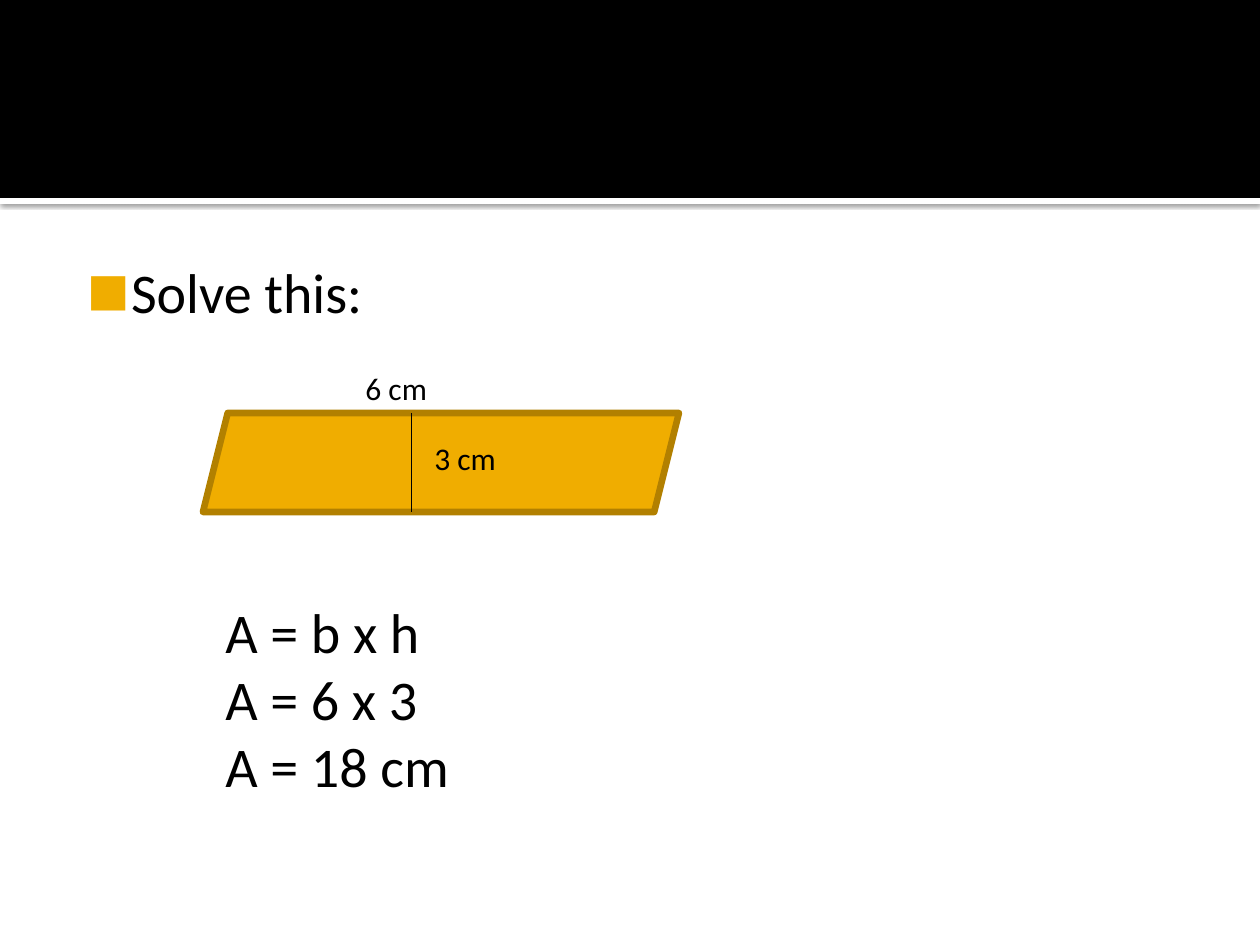
from dataclasses import dataclass

from lxml.etree import SubElement
from pptx import Presentation
from pptx.dml.color import RGBColor
from pptx.enum.shapes import MSO_CONNECTOR, MSO_SHAPE
from pptx.enum.text import MSO_ANCHOR, PP_ALIGN
from pptx.oxml.ns import qn
from pptx.util import Emu, Pt

PX = 914400 / 126
FONT = "Calibri"
COLORS = {
    "black": "000000",
    "white": "FFFFFF",
    "gold": "F0AD00",
    "dark_gold": "B28000",
}


@dataclass
class Box:
    left: int
    top: int
    width: int
    height: int

    def emu(self) -> list[Emu]:
        return [px(n) for n in (self.left, self.top, self.width, self.height)]


@dataclass
class Label:
    box: Box
    lines: list[str]
    size: int


def px(length: int) -> Emu:
    return Emu(round(length * PX))


def color(name: str) -> RGBColor:
    return RGBColor.from_string(COLORS[name])


def write(frame, lines: list[str], *, size: int, ink: str = "black") -> None:
    frame.word_wrap = True
    for index, line in enumerate(lines):
        para = frame.paragraphs[0] if index == 0 else frame.add_paragraph()
        para.alignment = PP_ALIGN.LEFT
        span = para.add_run()
        span.text = line
        span.font.name = FONT
        span.font.size = Pt(size)
        span.font.color.rgb = color(ink)


def add_block(page, kind: MSO_SHAPE, box: Box, fill: str):
    shape = page.shapes.add_shape(kind, *box.emu())
    shape.shadow.inherit = False
    shape.fill.solid()
    shape.fill.fore_color.rgb = color(fill)
    shape.line.fill.background()
    return shape


def add_shadow(shape) -> None:
    effects = shape._element.spPr.find(qn("a:effectLst"))
    shadow = SubElement(effects, qn("a:outerShdw"), blurRad=str(Pt(2.5)),
                        dist=str(Pt(0.8)), dir="5400000", algn="t", rotWithShape="0")
    tint = SubElement(shadow, qn("a:srgbClr"), val=COLORS["black"])
    SubElement(tint, qn("a:alpha"), val="60000")


def add_bullet(para, char: str, tint: str, percent: int, indent: int) -> None:
    props = para._p.get_or_add_pPr()
    props.set("marL", str(px(indent)))
    props.set("indent", str(px(-44)))
    bullet_color = SubElement(props, qn("a:buClr"))
    SubElement(bullet_color, qn("a:srgbClr"), val=COLORS[tint])
    SubElement(props, qn("a:buSzPct"), val=str(percent * 1000))
    SubElement(props, qn("a:buFont"), typeface=FONT)
    SubElement(props, qn("a:buChar"), char=char)


def add_label(page, label: Label) -> None:
    shape = page.shapes.add_textbox(*label.box.emu())
    write(shape.text_frame, label.lines, size=label.size)


def main() -> None:
    deck = Presentation()
    deck.slide_width, deck.slide_height = px(1260), px(945)
    page = deck.slides.add_slide(deck.slide_layouts[1])
    page.background.fill.solid()
    page.background.fill.fore_color.rgb = color("white")

    # Header band without a title
    title = page.shapes.title
    title._element.getparent().remove(title._element)
    add_shadow(add_block(page, MSO_SHAPE.RECTANGLE, Box(0, 198, 1260, 6), "white"))
    add_block(page, MSO_SHAPE.RECTANGLE, Box(0, 0, 1260, 198), "black")

    # Task
    body = page.placeholders[1]
    body.left, body.top, body.width, body.height = Box(63, 244, 1134, 638).emu()
    frame = body.text_frame
    frame.margin_left, frame.margin_top = px(8), px(13)
    frame.margin_right, frame.margin_bottom = px(13), px(6)
    frame.vertical_anchor = MSO_ANCHOR.TOP
    write(frame, ["Solve this:"], size=32)
    frame.paragraphs[0].space_before = Pt(0)
    add_bullet(frame.paragraphs[0], "■", "gold", percent=80, indent=60)

    # Parallelogram and its height
    figure = Box(203, 413, 476, 99)
    parallelogram = add_block(page, MSO_SHAPE.PARALLELOGRAM, figure, "gold")
    parallelogram.line.color.rgb = color("dark_gold")
    parallelogram.line.width = Pt(3.78)
    height = page.shapes.add_connector(
        MSO_CONNECTOR.STRAIGHT, px(411), px(figure.top),
        px(411), px(figure.top + figure.height))
    height.line.color.rgb = color("black")
    height.line.width = Pt(0.5)
    SubElement(height._element.spPr, qn("a:effectLst"))

    # Measurements and solution
    for label in (
        Label(Box(422, 433, 129, 50), ["3 cm"], 18),
        Label(Box(353, 363, 198, 50), ["6 cm"], 18),
        Label(Box(213, 591, 387, 217), ["A = b x h", "A = 6 x 3", "A = 18 cm"], 32),
    ):
        add_label(page, label)

    deck.save("out.pptx")


if __name__ == "__main__":
    main()
